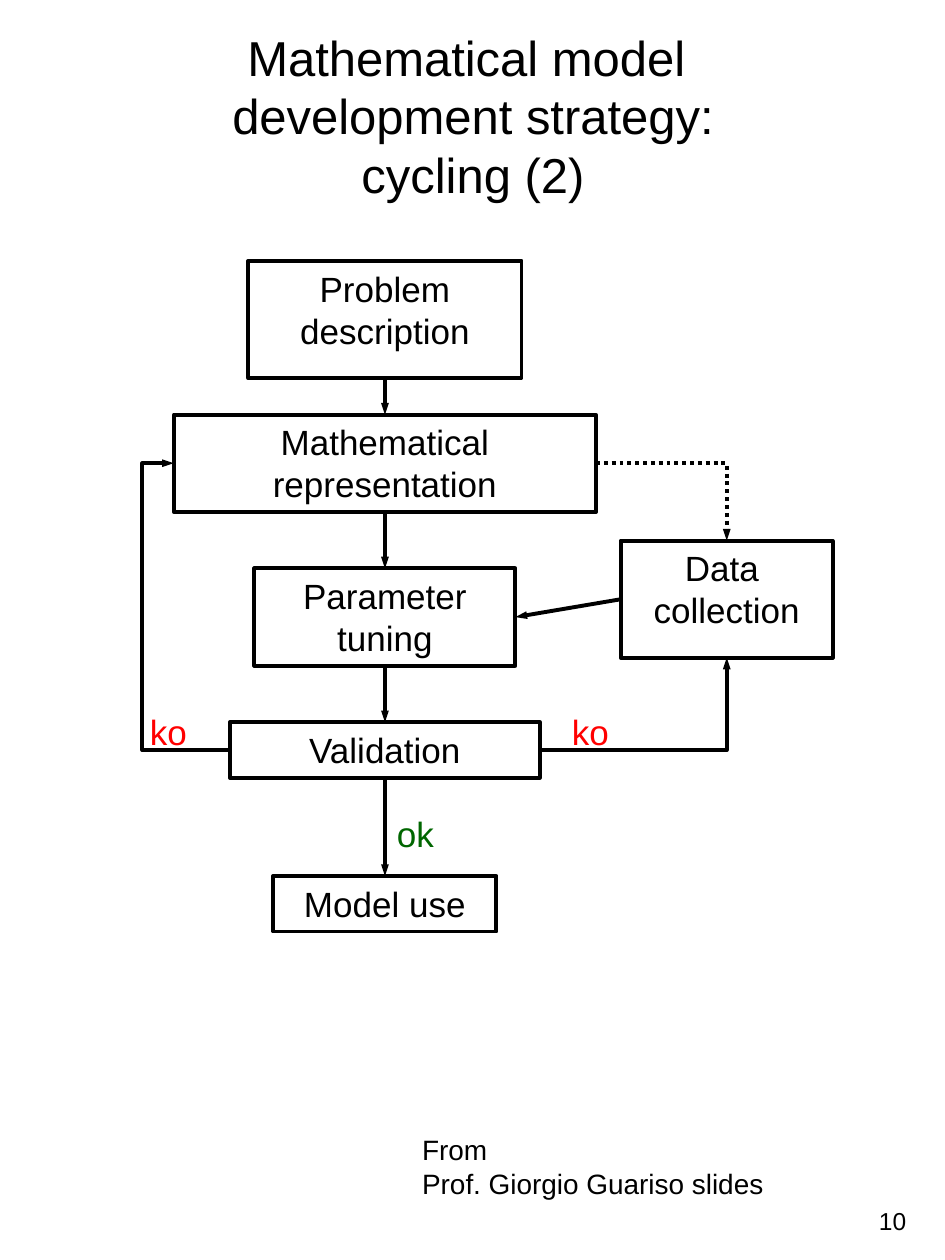
from lxml import etree
from pptx import Presentation
from pptx.dml.color import RGBColor
from pptx.enum.dml import MSO_LINE
from pptx.enum.shapes import MSO_CONNECTOR, MSO_SHAPE
from pptx.enum.text import MSO_ANCHOR, PP_ALIGN
from pptx.oxml.ns import qn
from pptx.util import Cm, Pt

RECT = MSO_SHAPE.RECTANGLE
STRAIGHT, ELBOW = MSO_CONNECTOR.STRAIGHT, MSO_CONNECTOR.ELBOW
DOTTED = MSO_LINE.ROUND_DOT
LEFT, CENTER, RIGHT = PP_ALIGN.LEFT, PP_ALIGN.CENTER, PP_ALIGN.RIGHT
TOP, MIDDLE = MSO_ANCHOR.TOP, MSO_ANCHOR.MIDDLE

THEME = {
    "font": "Arial",
    "ink": RGBColor(0, 0, 0), "ko": RGBColor(255, 0, 0), "ok": RGBColor(0, 0x66, 0),
    "title": Pt(28), "box": Pt(20), "source": Pt(16), "number": Pt(14),
    "line": Pt(2.25),
}

TITLE = "Mathematical model \vdevelopment strategy:\vcycling (2)"
STEPS = [
    ("Problem description", 5.51, 2.36),
    ("Mathematical representation", 8.51, 1.96),
    ("Parameter tuning", 5.26, 1.96),
    ("Validation", 6.25, 1.12),
    ("Model use", 4.5, 1.12),
]
DATA = ("Data \vcollection", 4.27, 2.36)
LABELS = [("ko", 2.77, 14.2), ("ko", 11.28, 14.2), ("ok", 7.75, 16.26)]
SOURCE = ["From", "Prof. Giorgio Guariso slides"]
NUMBER = "10"

AXIS, FIRST_TOP, PITCH = 7.76, 5.26, 3.1
DATA_AXIS, DATA_TOP = 14.65, 10.9
LOOP_X = 2.87

prs = Presentation()
prs.slide_width, prs.slide_height = Cm(19.05), Cm(25.4)
s = prs.slides.add_slide(prs.slide_layouts[5])


def write(sp, *lines, size, color=THEME["ink"], align=LEFT, anchor=TOP, wrap=True):
    tf = sp.text_frame
    tf.word_wrap, tf.vertical_anchor = wrap, anchor
    for i, line in enumerate(lines):
        p = tf.add_paragraph() if i else tf.paragraphs[0]
        p.text, p.alignment = line, align
        for r in p.runs:
            r.font.name, r.font.size = THEME["font"], size
            r.font.color.rgb = color


def text_box(x, y, w, h):
    return s.shapes.add_textbox(Cm(x), Cm(y), Cm(w), Cm(h))


def box(text, w, h, axis, top):
    sp = s.shapes.add_shape(RECT, Cm(axis - w / 2), Cm(top), Cm(w), Cm(h))
    sp.shadow.inherit = False
    sp.fill.background()
    sp.line.color.rgb, sp.line.width = THEME["ink"], THEME["line"]
    write(sp, text, size=THEME["box"], align=CENTER)
    return {"left": (axis - w / 2, top + h / 2), "right": (axis + w / 2, top + h / 2),
            "top": (axis, top), "bottom": (axis, top + h)}


def arrow(start, end, kind=STRAIGHT, dash=None, corner=False, via_x=None):
    c = s.shapes.add_connector(kind, *(Cm(v) for v in start + end))
    c.line.color.rgb, c.line.width = THEME["ink"], THEME["line"]
    if dash:
        c.line.dash_style = dash
    etree.SubElement(c.line._get_or_add_ln(), qn("a:tailEnd"), type="triangle", w="sm", len="med")
    sp_pr = c._element.spPr
    etree.SubElement(sp_pr, qn("a:effectLst"))
    geom = sp_pr.find(qn("a:prstGeom"))
    if corner:
        geom.set("prst", "bentConnector2")
    if via_x is not None:
        ratio = (via_x - start[0]) / (end[0] - start[0])
        guides = geom.find(qn("a:avLst"))
        if guides is None:
            guides = etree.SubElement(geom, qn("a:avLst"))
        etree.SubElement(guides, qn("a:gd"), name="adj1", fmla=f"val {round(ratio * 100000)}")


title = s.shapes.title
title.left, title.top, title.width, title.height = Cm(0.53), Cm(0), Cm(18.01), Cm(4.65)
write(title, TITLE, size=THEME["title"], align=CENTER, anchor=MIDDLE)

steps = [box(*step, AXIS, FIRST_TOP + i * PITCH) for i, step in enumerate(STEPS)]
data = box(*DATA, DATA_AXIS, DATA_TOP)
problem, representation, tuning, validation, use = steps

for above, below in zip(steps, steps[1:]):
    arrow(above["bottom"], below["top"])
arrow(data["left"], tuning["right"])
arrow(representation["right"], data["top"], ELBOW, dash=DOTTED, corner=True)
arrow(validation["right"], data["bottom"], ELBOW, corner=True)
arrow(validation["left"], representation["left"], ELBOW, via_x=LOOP_X)

for text, x, y in LABELS:
    write(text_box(x, y, 1.5, 1.32), text, size=THEME["box"], color=THEME[text], wrap=False)

write(text_box(8.26, 22.71, 8.28, 1.63), *SOURCE, size=THEME["source"])
write(text_box(14.07, 24.18, 4.45, 1.19), NUMBER, size=THEME["number"], align=RIGHT)

prs.save("out.pptx")
